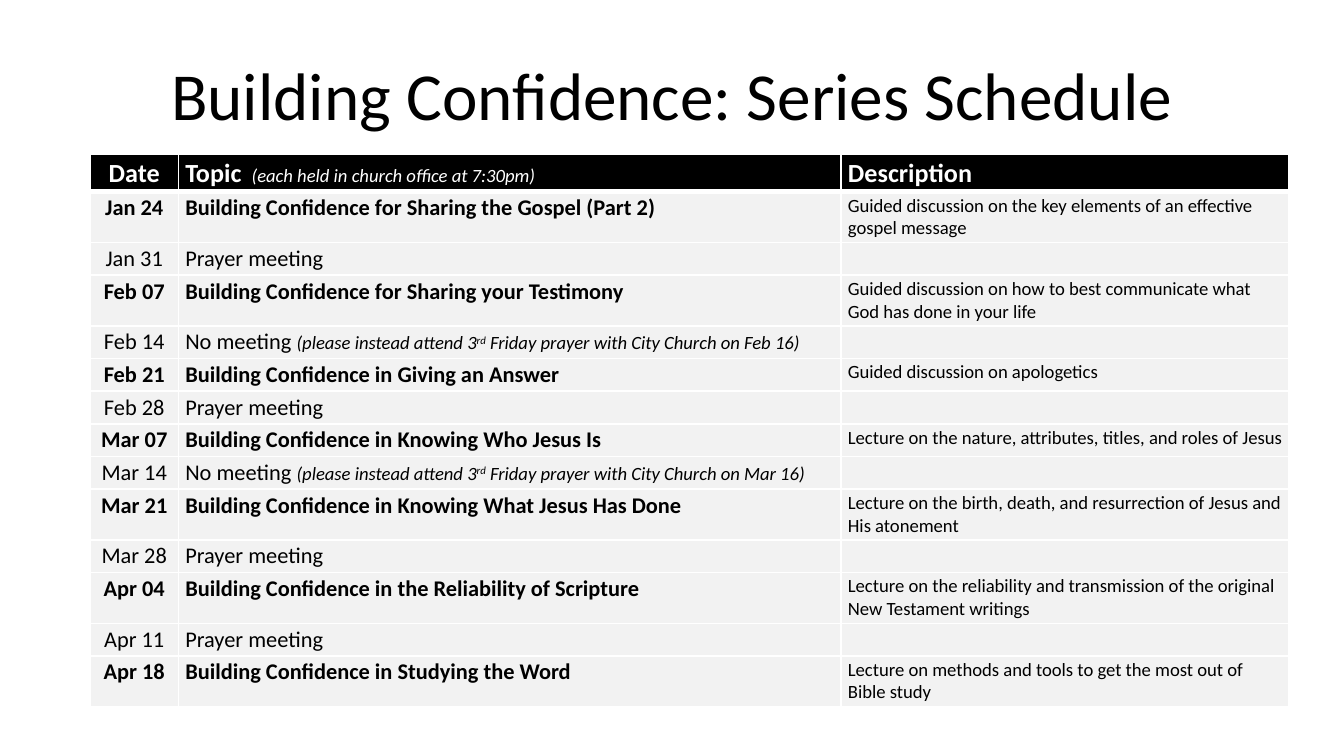
from lxml.etree import SubElement
from pptx import Presentation
from pptx.dml.color import RGBColor
from pptx.enum.text import MSO_ANCHOR, PP_ALIGN
from pptx.oxml.ns import qn
from pptx.util import Pt

COLORS = {"ink": "000000", "paper": "FFFFFF", "row": "F2F2F2"}
NOTE = {"size": Pt(10), "bold": False, "italic": True}
FORMATS = {
    "title": {"size": Pt(36)},
    "heading": {"size": Pt(14), "bold": True},
    "session": {"size": Pt(12), "bold": True},
    "plain": {"size": Pt(12), "bold": False},
    "description": {"size": Pt(10), "bold": False},
    "note": NOTE,
    "superscript": NOTE,
}
CELL_LAYOUT = {
    "margin_left": Pt(3.6), "margin_right": Pt(3.6),
    "margin_top": Pt(1.44), "margin_bottom": Pt(1.44),
    "vertical_anchor": MSO_ANCHOR.TOP,
}
COLUMN_WIDTHS = (47.5, 355, 239.8)
HEADER_HEIGHT, ONE_LINE, TWO_LINES = 20, 17.5, 27.2
# Longest description that fits on one line, in characters
DESCRIPTION_LINE_LENGTH = 61


def apply(target, values):
    for name, value in values.items():
        setattr(target, name, value)


class ScheduleSlide:
    def __init__(self, slide, font="Calibri"):
        self.slide = slide
        self.font = font

    def add_runs(self, paragraph, runs, color, align):
        paragraph.alignment = align
        for text, style in runs:
            run = paragraph.add_run()
            run.text = text
            apply(run.font, {"name": self.font, **FORMATS[style]})
            run.font.color.rgb = RGBColor.from_string(COLORS[color])
            if style == "superscript":
                run._r.get_or_add_rPr().set("baseline", "30000")
        if not runs:
            SubElement(paragraph._p, qn("a:endParaRPr"), sz="1000")

    def title(self, text, left, top, width, height):
        title = self.slide.shapes.title
        apply(title, {"left": Pt(left), "top": Pt(top),
                      "width": Pt(width), "height": Pt(height)})
        title.text_frame.vertical_anchor = MSO_ANCHOR.MIDDLE
        self.add_runs(title.text_frame.paragraphs[0], [(text, "title")],
                      "ink", PP_ALIGN.CENTER)

    def borders(self, cell, bottom):
        properties = cell._tc.get_or_add_tcPr()
        for side, width in (("L", 1), ("R", 1), ("T", 1), ("B", bottom)):
            line = SubElement(properties, qn(f"a:ln{side}"), w=str(int(Pt(width))))
            fill = SubElement(line, qn("a:solidFill"))
            SubElement(fill, qn("a:srgbClr"), val=COLORS["paper"])

    def cell(self, cell, runs, is_header, align):
        apply(cell, CELL_LAYOUT)
        self.borders(cell, 3 if is_header else 1)
        cell.fill.solid()
        cell.fill.fore_color.rgb = RGBColor.from_string(
            COLORS["ink" if is_header else "row"])
        self.add_runs(cell.text_frame.paragraphs[0], runs,
                      "paper" if is_header else "ink", align)

    def table(self, rows, heights, left, top):
        table = self.slide.shapes.add_table(
            len(rows), len(COLUMN_WIDTHS), Pt(left), Pt(top),
            Pt(sum(COLUMN_WIDTHS)), Pt(sum(heights))).table
        table.horz_banding = False
        for column, width in zip(table.columns, COLUMN_WIDTHS):
            column.width = Pt(width)
        for r, (row, height) in enumerate(zip(rows, heights)):
            table.rows[r].height = Pt(height)
            for c, runs in enumerate(row):
                align = PP_ALIGN.LEFT if c else PP_ALIGN.CENTER
                self.cell(table.cell(r, c), runs, r == 0, align)


# Each row holds the runs of its date, topic and description
def session(date, topic, description):
    return ([(date, "session")],
            [("Building Confidence " + topic, "session")],
            [(description, "description")])


def prayer(date):
    return [(date, "plain")], [("Prayer meeting", "plain")], []


def no_meeting(date, friday):
    return ([(date, "plain")],
            [("No meeting ", "plain"),
             ("(please instead attend 3", "note"),
             ("rd", "superscript"),
             (f" Friday prayer with City Church on {friday})", "note")],
            [])


def row_height(row):
    description = "".join(text for text, _ in row[2])
    return TWO_LINES if len(description) > DESCRIPTION_LINE_LENGTH else ONE_LINE


HEADER = (
    [("Date", "heading")],
    [("Topic ", "heading"),
     (" (each held in church office at 7:30pm)", "note")],
    [("Description", "heading")],
)
MEETINGS = [
    session("Jan 24", "for Sharing the Gospel (Part 2)",
            "Guided discussion on the key elements of an effective gospel message"),
    prayer("Jan 31"),
    session("Feb 07", "for Sharing your Testimony",
            "Guided discussion on how to best communicate what God has done in your life"),
    no_meeting("Feb 14", "Feb 16"),
    session("Feb 21", "in Giving an Answer", "Guided discussion on apologetics"),
    prayer("Feb 28"),
    session("Mar 07", "in Knowing Who Jesus Is",
            "Lecture on the nature, attributes, titles, and roles of Jesus"),
    no_meeting("Mar 14", "Mar 16"),
    session("Mar 21", "in Knowing What Jesus Has Done",
            "Lecture on the birth, death, and resurrection of Jesus and His atonement"),
    prayer("Mar 28"),
    session("Apr 04", "in the Reliability of Scripture",
            "Lecture on the reliability and transmission of the original "
            "New Testament writings"),
    prayer("Apr 11"),
    session("Apr 18", "in Studying the Word",
            "Lecture on methods and tools to get the most out of Bible study"),
]


def main():
    presentation = Presentation()
    apply(presentation, {"slide_width": Pt(720), "slide_height": Pt(405)})
    title_only = presentation.slide_layouts[5]
    schedule = ScheduleSlide(presentation.slides.add_slide(title_only))

    # Title
    schedule.title("Building Confidence: Series Schedule", 36, 16.5, 648, 67.5)

    # Schedule table
    heights = [HEADER_HEIGHT] + [row_height(meeting) for meeting in MEETINGS]
    schedule.table([HEADER] + MEETINGS, heights, 48.2, 82.8)

    presentation.save("out.pptx")


if __name__ == "__main__":
    main()
